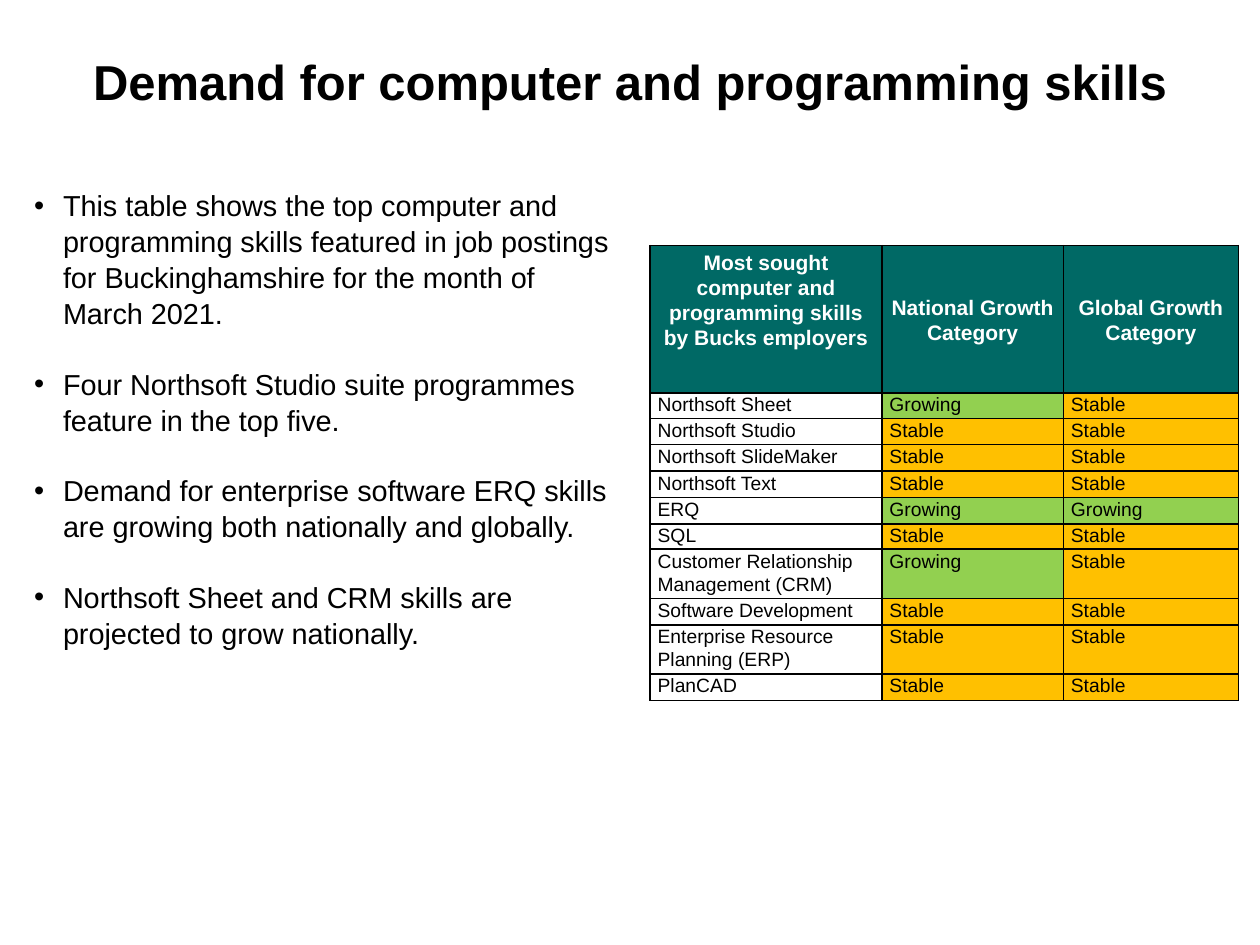
from lxml.etree import SubElement
from pptx import Presentation
from pptx.dml.color import RGBColor
from pptx.enum.text import MSO_ANCHOR, MSO_AUTO_SIZE, PP_ALIGN
from pptx.oxml.ns import qn
from pptx.util import Inches, Pt

TITLE = "Demand for computer and programming skills"
BULLETS = [
    "This table shows the top computer and programming skills featured in job postings "
    "for Buckinghamshire for the month of March 2021.",
    "Four Northsoft Studio suite programmes feature in the top five.",
    "Demand for enterprise software ERQ skills are growing both nationally and globally.",
    "Northsoft Sheet and CRM skills are projected to grow nationally.",
]
HEADERS = [
    "Most sought computer and programming skills by Bucks employers",
    "National Growth Category",
    "Global Growth Category",
]
SKILLS = [
    ("Northsoft Sheet", "Growing", "Stable", 0.2),
    ("Northsoft Studio", "Stable", "Stable", 0.21),
    ("Northsoft SlideMaker", "Stable", "Stable", 0.21),
    ("Northsoft Text", "Stable", "Stable", 0.21),
    ("ERQ", "Growing", "Growing", 0.21),
    ("SQL", "Stable", "Stable", 0.2),
    ("Customer Relationship Management (CRM)", "Growing", "Stable", 0.39),
    ("Software Development", "Stable", "Stable", 0.21),
    ("Enterprise Resource Planning (ERP)", "Stable", "Stable", 0.39),
    ("PlanCAD", "Stable", "Stable", 0.21),
]
COL_WIDTHS = [1.84, 1.44, 1.39]
HEADER_HEIGHT = 1.17
HEADER_FILL = "006965"
CATEGORY_FILLS = {"Growing": "92D050", "Stable": "FFC000"}


def rgb(value):
    return RGBColor.from_string(value)


def write(p, text, size=11, color="000000", bold=False, align=PP_ALIGN.LEFT,
          spacing=1.0, before=0, bullet=False):
    if bullet:
        pPr = p._p.get_or_add_pPr()
        pPr.set("marL", str(Inches(0.23)))
        pPr.set("indent", str(-Inches(0.23)))
        SubElement(pPr, qn("a:buFont"), typeface="Arial")
        SubElement(pPr, qn("a:buChar"), char="•")
    p.alignment = align
    p.line_spacing = spacing
    p.space_before = Pt(before)
    r = p.add_run()
    r.text = text
    r.font.name = "Arial"
    r.font.size = Pt(size)
    r.font.bold = bold
    r.font.color.rgb = rgb(color)


def place(sp, left, top, width, height, anchor):
    sp.left, sp.top, sp.width, sp.height = map(Inches, (left, top, width, height))
    tf = sp.text_frame
    tf.word_wrap = True
    tf.auto_size = MSO_AUTO_SIZE.NONE
    tf.vertical_anchor = anchor
    return tf


def style_cell(cell, fill=None):
    cell.margin_left = cell.margin_right = Inches(0.06)
    cell.margin_top = cell.margin_bottom = 0
    tcPr = cell._tc.get_or_add_tcPr()
    for side in ("lnL", "lnR", "lnT", "lnB"):
        ln = SubElement(tcPr, qn(f"a:{side}"), w=str(Pt(1)))
        SubElement(SubElement(ln, qn("a:solidFill")), qn("a:srgbClr"), val="000000")
    if fill:
        cell.fill.solid()
        cell.fill.fore_color.rgb = rgb(fill)
    else:
        cell.fill.background()


prs = Presentation()
prs.slide_width, prs.slide_height = Inches(10), Inches(7.5)
s = prs.slides.add_slide(prs.slide_layouts[1])

tf = place(s.shapes.title, 0.5, 0.02, 9, 1.25, MSO_ANCHOR.MIDDLE)
write(tf.paragraphs[0], TITLE, size=28, bold=True, align=PP_ALIGN.CENTER)

tf = place(s.placeholders[1], 0.17, 1.43, 4.83, 3.99, MSO_ANCHOR.TOP)
for i, text in enumerate(BULLETS):
    p = tf.add_paragraph() if i else tf.paragraphs[0]
    write(p, text, size=16.5, spacing=1.04, before=19.8 if i else 0, bullet=True)

heights = [HEADER_HEIGHT] + [row[-1] for row in SKILLS]
table = s.shapes.add_table(len(heights), len(COL_WIDTHS), Inches(5.16), Inches(1.95),
                           Inches(sum(COL_WIDTHS)), Inches(sum(heights))).table
table.horz_banding = False
for column, width in zip(table.columns, COL_WIDTHS):
    column.width = Inches(width)
for row, height in zip(table.rows, heights):
    row.height = Inches(height)

for c, text in enumerate(HEADERS):
    cell = table.cell(0, c)
    style_cell(cell, HEADER_FILL)
    cell.vertical_anchor = MSO_ANCHOR.MIDDLE
    write(cell.text_frame.paragraphs[0], text, size=12, color="FFFFFF", bold=True,
          align=PP_ALIGN.CENTER, spacing=1.07)
table.cell(0, 0).margin_bottom = Inches(0.31)

for r, (*texts, _) in enumerate(SKILLS, 1):
    for c, text in enumerate(texts):
        cell = table.cell(r, c)
        style_cell(cell, CATEGORY_FILLS.get(text))
        write(cell.text_frame.paragraphs[0], text, spacing=1.07)

prs.save("out.pptx")
